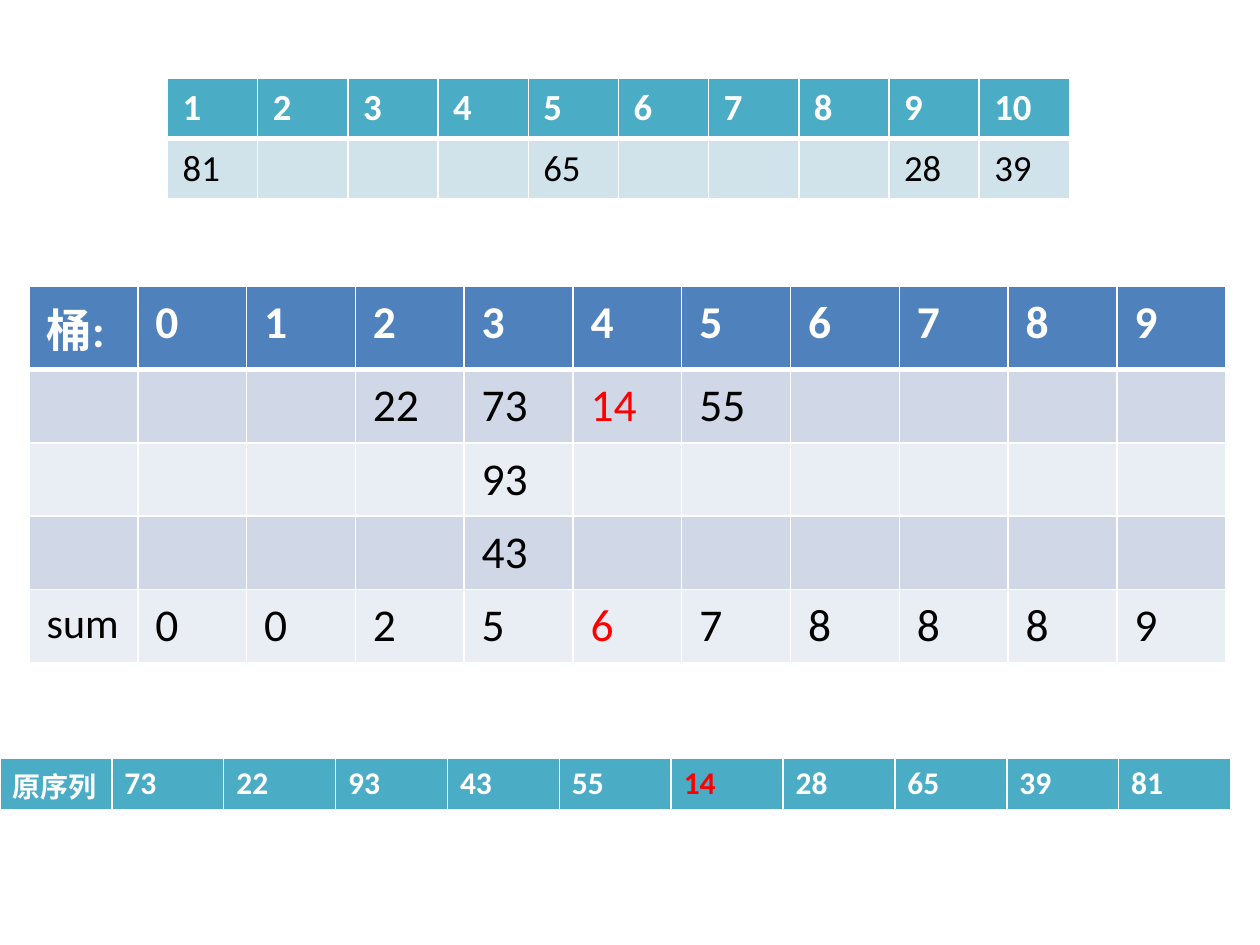
from lxml.etree import SubElement
from pptx import Presentation
from pptx.dml.color import RGBColor
from pptx.oxml.ns import qn
from pptx.util import Inches, Pt

COLORS = {
    "white": "FFFFFF", "black": "000000", "red": "FF0000",
    "teal": "4BACC6", "teal_band": "D0E3EA",
    "blue": "4F81BD", "blue_band": "D0D8E8", "blue_pale": "E9EDF4",
}
FONT = "Calibri"


def set_borders(cell, top, bottom):
    """White borders, 1 pt at the sides and the given points above and below."""
    properties = cell._tc.get_or_add_tcPr()
    for side, width in (("L", 1), ("R", 1), ("T", top), ("B", bottom)):
        line = SubElement(properties, qn(f"a:ln{side}"), w=str(Pt(width)))
        fill = SubElement(line, qn("a:solidFill"))
        SubElement(fill, qn("a:srgbClr"), val=COLORS["white"])


def write(cell, text, size, color, bold):
    cell.text_frame.text = text
    font = cell.text_frame.paragraphs[0].runs[0].font
    font.name, font.size, font.bold = FONT, Pt(size), bold
    font.color.rgb = RGBColor.from_string(COLORS[color])


def add_grid(slide, left, top, width, row_height, rows, fills, size,
             inset=0.1, sizes=None, marked=()):
    """Add a table whose first row is a header; marked cells have red text."""
    sizes = sizes or {}
    columns = len(rows[0])
    table = slide.shapes.add_table(
        len(rows), columns, Inches(left), Inches(top),
        Inches(width), Inches(row_height * len(rows))).table
    table.first_row = table.horz_banding = False
    for column in table.columns:
        column.width = Inches(width / columns)

    for r, (values, fill) in enumerate(zip(rows, fills)):
        table.rows[r].height = Inches(row_height)
        for c, value in enumerate(values):
            cell = table.cell(r, c)
            cell.margin_left = cell.margin_right = Inches(inset)
            cell.margin_top = cell.margin_bottom = Inches(inset / 2)
            set_borders(cell, 3 if r == 1 else 1, 3 if r == 0 else 1)
            cell.fill.solid()
            cell.fill.fore_color.rgb = RGBColor.from_string(COLORS[fill])
            if value != "":
                plain = "white" if r == 0 else "black"
                color = "red" if (r, c) in marked else plain
                write(cell, str(value), sizes.get((r, c), size), color, r == 0)


def bucket_row(label="", **values):
    """A row of ten buckets, filled where a value is given as b0 to b9."""
    return [label] + [values.get(f"b{digit}", "") for digit in range(10)]


def main():
    prs = Presentation()
    prs.slide_width, prs.slide_height = Inches(10), Inches(7.5)
    slide = prs.slides.add_slide(prs.slide_layouts[6])

    buckets = [
        ["桶:", *range(10)],
        bucket_row(b2=22, b3=73, b4=14, b5=55),
        bucket_row(b3=93),
        bucket_row(b3=43),
        ["sum", 0, 0, 2, 5, 6, 7, 8, 8, 8, 9],
    ]
    add_grid(slide, 0.23, 2.27, 9.5, 0.58, buckets,
             ["blue"] + ["blue_band", "blue_pale"] * 2, 26, inset=0.14,
             sizes={(4, 0): 24}, marked={(1, 5), (4, 5)})

    sorted_places = [
        range(1, 11),
        [81, "", "", "", 65, "", "", "", 28, 39],
    ]
    add_grid(slide, 1.33, 0.62, 7.16, 0.48, sorted_places,
             ["teal", "teal_band"], 21, inset=0.12)

    sequence = [["原序列", 73, 22, 93, 43, 55, 14, 28, 65, 39, 81]]
    add_grid(slide, 0, 6.02, 9.77, 0.41, sequence, ["teal"], 18,
             sizes={(0, 0): 16}, marked={(0, 6)})

    prs.save("out.pptx")


if __name__ == "__main__":
    main()
